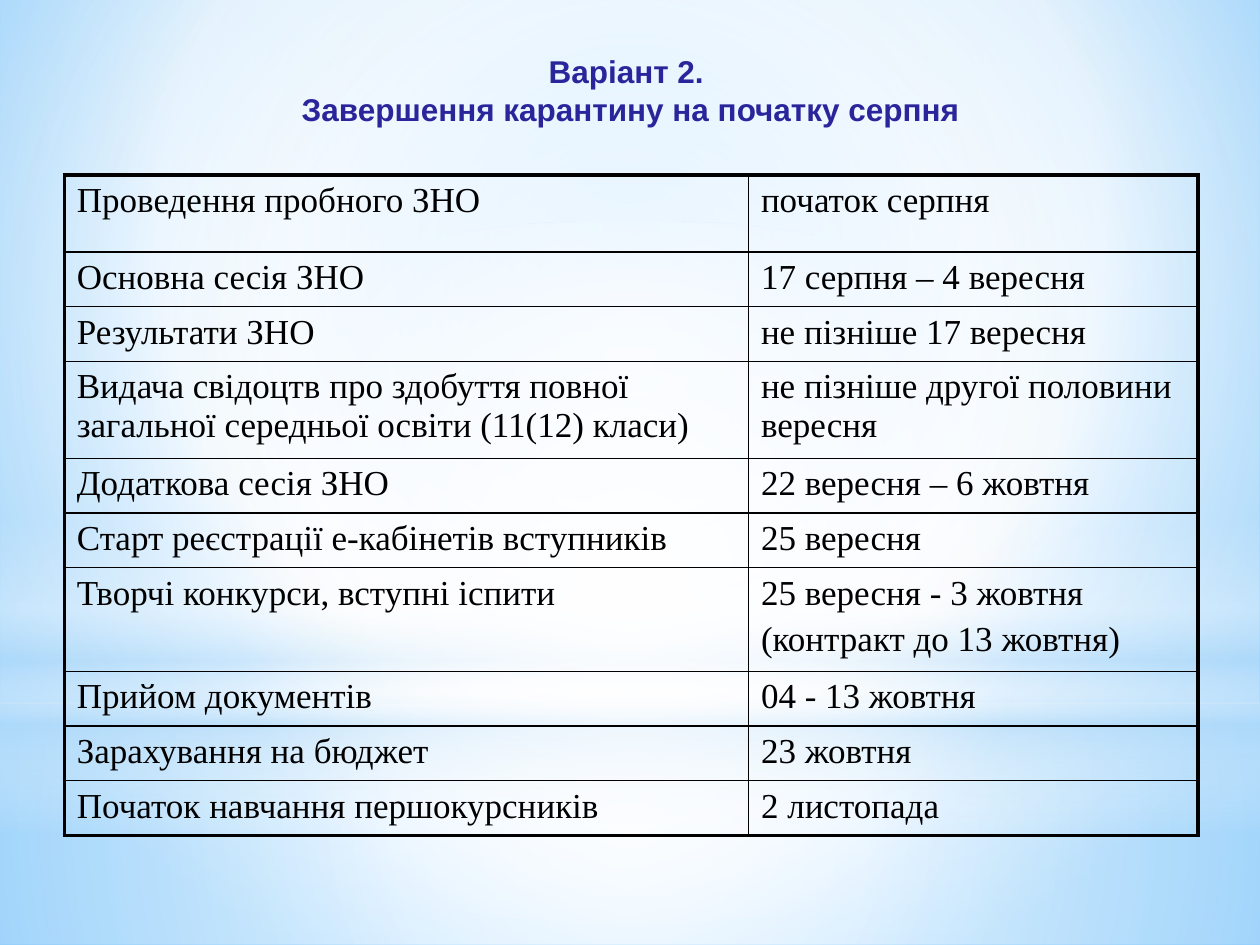
from dataclasses import dataclass
from typing import NamedTuple, Optional

from lxml import etree
from pptx import Presentation
from pptx.dml.color import RGBColor
from pptx.enum.shapes import MSO_SHAPE as Shape
from pptx.enum.text import MSO_ANCHOR as Anchor, MSO_AUTO_SIZE as AutoSize, PP_ALIGN as Align
from pptx.oxml.ns import qn
from pptx.util import Inches, Pt


@dataclass(frozen=True)
class Theme:
    title_font: str = "Arial"
    body_font: str = "Times New Roman"
    title_size: float = 18
    body_size: float = 20
    title_color: str = "2B259B"
    ink: str = "000000"
    white: str = "FFFFFF"
    haze: str = "B4DCFA"
    sky: str = "9ED5FF"
    deep_sky: str = "5BB9FF"
    outer_line: float = 2.25
    inner_line: float = 1


class Stop(NamedTuple):
    pos: int
    color: str
    alpha: int = 100


class Glow(NamedTuple):
    shape: Shape
    top: float
    height: float
    stops: list[Stop]
    angle: Optional[int] = None


class Event(NamedTuple):
    name: str
    date: str
    height: float = 0.43


T = Theme()
CENTER = (50, 50, 50, 50)

GLOWS = [
    Glow(Shape.RECTANGLE, 5.58, 1.92,
         [Stop(0, T.white, 91), Stop(37, T.white, 76), Stop(100, T.haze, 79)]),
    Glow(Shape.RECTANGLE, 0, 5.58,
         [Stop(0, T.white, 89), Stop(48, T.white, 62), Stop(100, T.haze, 79)]),
    Glow(Shape.RECTANGLE, 4.12, 2.5,
         [Stop(0, T.white, 0), Stop(29, T.white, 30), Stop(45, T.haze, 40),
          Stop(55, T.white, 26), Stop(65, T.haze, 60), Stop(100, T.white, 0)], 90),
    Glow(Shape.OVAL, 1.75, 5.58, [Stop(0, T.white), Stop(56, T.white, 0)]),
]

EVENTS = [
    Event("Проведення пробного ЗНО", "початок серпня", 0.61),
    Event("Основна сесія ЗНО", "17 серпня – 4 вересня"),
    Event("Результати ЗНО", "не пізніше 17 вересня"),
    Event("Видача свідоцтв про здобуття повної загальної середньої освіти (11(12) класи)",
          "не пізніше другої половини вересня", 0.77),
    Event("Додаткова сесія ЗНО", "22 вересня – 6 жовтня"),
    Event("Старт реєстрації е-кабінетів вступників", "25 вересня"),
    Event("Творчі конкурси, вступні іспити",
          "25 вересня - 3 жовтня\n(контракт до 13 жовтня)", 0.82),
    Event("Прийом документів", "04 - 13 жовтня"),
    Event("Зарахування на бюджет", "23 жовтня"),
    Event("Початок навчання першокурсників", "2 листопада"),
]


def gradient(stops: list[Stop], focus=CENTER, angle: Optional[int] = None):
    """Linear gradient when an angle is given, otherwise circular."""
    grad = etree.Element(qn("a:gradFill"), rotWithShape="1")
    gs_list = etree.SubElement(grad, qn("a:gsLst"))
    for stop in stops:
        gs = etree.SubElement(gs_list, qn("a:gs"), pos=str(stop.pos * 1000))
        color = etree.SubElement(gs, qn("a:srgbClr"), val=stop.color)
        if stop.alpha < 100:
            etree.SubElement(color, qn("a:alpha"), val=str(stop.alpha * 1000))
    if angle is not None:
        etree.SubElement(grad, qn("a:lin"), ang=str(angle * 60000), scaled="0")
    else:
        circle = etree.SubElement(grad, qn("a:path"), path="circle")
        sides = {side: str(v * 1000) for side, v in zip("ltrb", focus)}
        etree.SubElement(circle, qn("a:fillToRect"), sides)
    return grad


def replace_fill(parent, tag: str, grad) -> None:
    parent.replace(parent.find(qn(tag)), grad)


def add_glow(s, glow: Glow) -> None:
    sp = s.shapes.add_shape(glow.shape, 0, Inches(glow.top), Inches(10), Inches(glow.height))
    sp.shadow.inherit = False
    sp.fill.background()
    sp.line.fill.background()
    replace_fill(sp.element.spPr, "a:noFill", gradient(glow.stops, angle=glow.angle))


def format_text(tf, font: str, size: float, color: str, bold: bool = False) -> None:
    for p in tf.paragraphs:
        for r in p.runs:
            r.font.name, r.font.size, r.font.bold = font, Pt(size), bold
            r.font.color.rgb = RGBColor.from_string(color)


def set_borders(cell, widths: dict[str, float]) -> None:
    """Draw the cell edges; they go before the fill in the cell properties."""
    tc_pr = cell._tc.get_or_add_tcPr()
    for i, (side, width) in enumerate(widths.items()):
        ln = etree.Element(qn(f"a:ln{side}"), w=str(Pt(width)))
        fill = etree.SubElement(ln, qn("a:solidFill"))
        etree.SubElement(fill, qn("a:srgbClr"), val=T.ink)
        tc_pr.insert(i, ln)


def add_title(s, text: str) -> None:
    title = s.shapes.title
    title.left, title.top = Inches(0.28), Inches(0.36)
    title.width, title.height = Inches(9.45), Inches(0.71)
    tf = title.text_frame
    tf.text = text
    tf.word_wrap = True
    tf.auto_size = AutoSize.SHAPE_TO_FIT_TEXT
    tf.vertical_anchor = Anchor.MIDDLE
    tf.paragraphs[0].alignment = Align.CENTER
    format_text(tf, T.title_font, T.title_size, T.title_color, bold=True)
    # Bring the title in front of the background glows
    title.element.getparent().append(title.element)


def add_schedule(s, events: list[Event]) -> None:
    height = sum(e.height for e in events)
    table = s.shapes.add_table(len(events), 2, Inches(0.51), Inches(1.39),
                               Inches(9), Inches(height)).table
    table.first_row = table.horz_banding = False
    for col, width in zip(table.columns, (5.43, 3.57)):
        col.width = Inches(width)
    last = len(events) - 1
    for i, event in enumerate(events):
        table.rows[i].height = Inches(event.height)
        for j, text in enumerate((event.name, event.date)):
            cell = table.cell(i, j)
            cell.fill.background()
            cell.text_frame.text = text
            for p in cell.text_frame.paragraphs:
                p.space_before = Pt(T.body_size * 0.2)
            format_text(cell.text_frame, T.body_font, T.body_size, T.ink)
            outer = {"L": j == 0, "R": j == 1, "T": i == 0, "B": i == last}
            set_borders(cell, {side: T.outer_line if edge else T.inner_line
                               for side, edge in outer.items()})


def main() -> None:
    prs = Presentation()
    prs.slide_width, prs.slide_height = Inches(10), Inches(7.5)
    s = prs.slides.add_slide(prs.slide_layouts[5])

    # Background
    s.background.fill.solid()
    bg_pr = next(s.element.iter(qn("p:bgPr")))
    sky = [Stop(0, T.sky), Stop(60, T.white), Stop(100, T.deep_sky)]
    replace_fill(bg_pr, "a:solidFill", gradient(sky, (20, 10, 20, 60)))
    for glow in GLOWS:
        add_glow(s, glow)

    # Title and schedule
    add_title(s, "Варіант 2. \vЗавершення карантину на початку серпня")
    add_schedule(s, EVENTS)
    prs.save("out.pptx")


if __name__ == "__main__":
    main()
